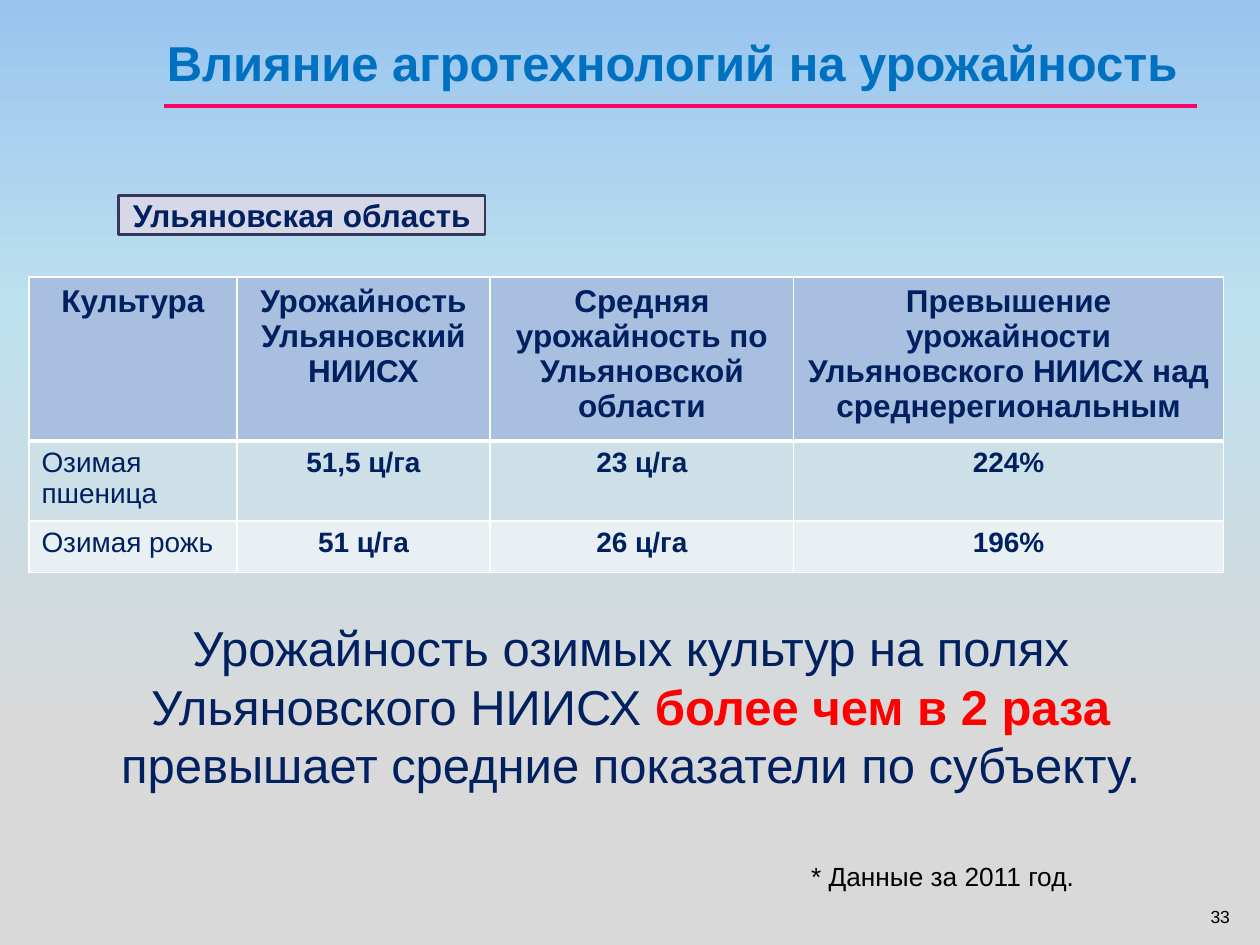
import copy
import pptx
import pptx.util
import pptx.dml.color
import pptx.enum.shapes
import pptx.enum.text
import pptx.oxml
import pptx.oxml.ns
import lxml.etree

Inches = pptx.util.Inches
Pt = pptx.util.Pt
RGBColor = pptx.dml.color.RGBColor
Align = pptx.enum.text.PP_ALIGN
Anchor = pptx.enum.text.MSO_ANCHOR
qn = pptx.oxml.ns.qn

SKY = RGBColor(0x99, 0xC4, 0xEF)
PALE = RGBColor(0xBD, 0xE0, 0xEF)
GREY = RGBColor(0xD9, 0xD9, 0xD9)
BLACK = RGBColor(0, 0, 0)
WHITE = RGBColor(0xFF, 0xFF, 0xFF)
NAVY = RGBColor(0x00, 0x20, 0x60)
BLUE = RGBColor(0x00, 0x70, 0xC0)
RED = RGBColor(0xFF, 0, 0)
PINK = RGBColor(0xFF, 0x00, 0x66)
LILAC = RGBColor(0xD7, 0xD8, 0xE7)
EDGE = RGBColor(0x35, 0x38, 0x5A)
FILLS = [RGBColor(0xA8, 0xBF, 0xDF), RGBColor(0xCD, 0xE0, 0xE8),
         RGBColor(0xE8, 0xF0, 0xF4)]

WIDTHS = [1.65, 2.01, 2.41, 3.41]
HEIGHTS = [1.3, 0.63, 0.41]
ROWS = [
    ["Культура", "Урожайность Ульяновский НИИСХ",
     "Средняя урожайность по Ульяновской области",
     "Превышение урожайности Ульяновского НИИСХ над среднерегиональным"],
    ["Озимая пшеница", "51,5 ц/га", "23 ц/га", "224%"],
    ["Озимая рожь", "51 ц/га", "26 ц/га", "196%"],
]


def write(frame, runs, size, align):
    para = frame.paragraphs[0]
    para.alignment = align
    for text, color, bold in runs:
        run = para.add_run()
        run.text = text
        run.font.name = "Arial"
        run.font.size = Pt(size)
        run.font.bold = bold
        run.font.color.rgb = color


def add_text(slide, box, runs, size, align, anchor=Anchor.TOP, grow=True):
    frame = slide.shapes.add_textbox(*map(Inches, box)).text_frame
    frame.word_wrap = True
    frame.vertical_anchor = anchor
    if grow:
        frame.auto_size = pptx.enum.text.MSO_AUTO_SIZE.SHAPE_TO_FIT_TEXT
    write(frame, runs, size, align)


def add_badge(slide, box, text):
    kind = pptx.enum.shapes.MSO_SHAPE.RECTANGLE
    badge = slide.shapes.add_shape(kind, *map(Inches, box))
    badge.shadow.inherit = False
    badge.fill.solid()
    badge.fill.fore_color.rgb = LILAC
    badge.line.color.rgb = EDGE
    badge.line.width = Pt(1.5)
    badge.text_frame.word_wrap = True
    badge.text_frame.vertical_anchor = Anchor.MIDDLE
    write(badge.text_frame, [(text, NAVY, True)], 18, Align.CENTER)


def add_rule(slide, left, right, top):
    kind = pptx.enum.shapes.MSO_CONNECTOR.STRAIGHT
    rule = slide.shapes.add_connector(
        kind, Inches(left), Inches(top), Inches(right), Inches(top))
    rule.line.color.rgb = PINK
    rule.line.width = Pt(2.5)
    lxml.etree.SubElement(rule._element.spPr, qn("a:effectLst"))


def set_edges(cell, top, base):
    props = cell._tc.get_or_add_tcPr()
    sides = [("L", 1), ("R", 1), ("T", top), ("B", base)]
    for spot, (side, width) in enumerate(sides):
        edge = pptx.oxml.parse_xml(
            f'<a:ln{side} {pptx.oxml.ns.nsdecls("a")} w="{Pt(width)}">'
            f'<a:solidFill><a:srgbClr val="{WHITE}"/></a:solidFill>'
            f'</a:ln{side}>')
        props.insert(spot, edge)


def add_table(slide, left, top):
    table = slide.shapes.add_table(
        len(ROWS), len(WIDTHS), Inches(left), Inches(top),
        Inches(sum(WIDTHS)), Inches(sum(HEIGHTS))).table
    for col, width in zip(table.columns, WIDTHS):
        col.width = Inches(width)
    for r, (texts, height, color) in enumerate(zip(ROWS, HEIGHTS, FILLS)):
        table.rows[r].height = Inches(height)
        head = r == 0
        for c, text in enumerate(texts):
            cell = table.cell(r, c)
            cell.fill.solid()
            cell.fill.fore_color.rgb = color
            set_edges(cell, 3 if r == 1 else 1, 3 if head else 1)
            strong = head or c > 0
            write(cell.text_frame, [(text, NAVY, strong)],
                  18 if head else 16, Align.CENTER if strong else Align.LEFT)


def paint_back(slide):
    fill = slide.background.fill
    fill.gradient()
    fill.gradient_angle = 270
    stops = slide._element.find(".//" + qn("a:gsLst"))
    stops.append(copy.deepcopy(stops[0]))
    shades = [(0, SKY), (0.32, PALE), (0.78, GREY)]
    for stop, (spot, color) in zip(fill.gradient_stops, shades):
        stop.position = spot
        stop.color.rgb = color


def main():
    deck = pptx.Presentation()
    deck.slide_width, deck.slide_height = Inches(10), Inches(7.5)
    slide = deck.slides.add_slide(deck.slide_layouts[6])
    paint_back(slide)
    add_text(slide, (9.46, 7.01, 0.4, 0.4), [("33", BLACK, False)], 10,
             Align.RIGHT, Anchor.BOTTOM, grow=False)
    add_rule(slide, 1.3, 9.5, 0.84)
    add_text(slide, (1.15, 0.21, 8.37, 0.57),
             [("Влияние агротехнологий на урожайность", BLUE, True)],
             28, Align.CENTER)
    add_table(slide, 0.23, 2.2)
    add_text(slide, (6.34, 6.78, 2.44, 0.35),
             [("* Данные за 2011 год.", BLACK, False)], 15, Align.LEFT)
    add_badge(slide, (0.94, 1.55, 2.91, 0.31), "Ульяновская область")
    add_text(slide, (0.83, 4.85, 8.35, 1.51), [
        ("Урожайность озимых культур на полях Ульяновского НИИСХ ",
         NAVY, False),
        ("более чем в 2 раза ", RED, True),
        ("превышает средние показатели по субъекту.", NAVY, False),
    ], 28, Align.CENTER)
    deck.save("out.pptx")


if __name__ == "__main__":
    main()
